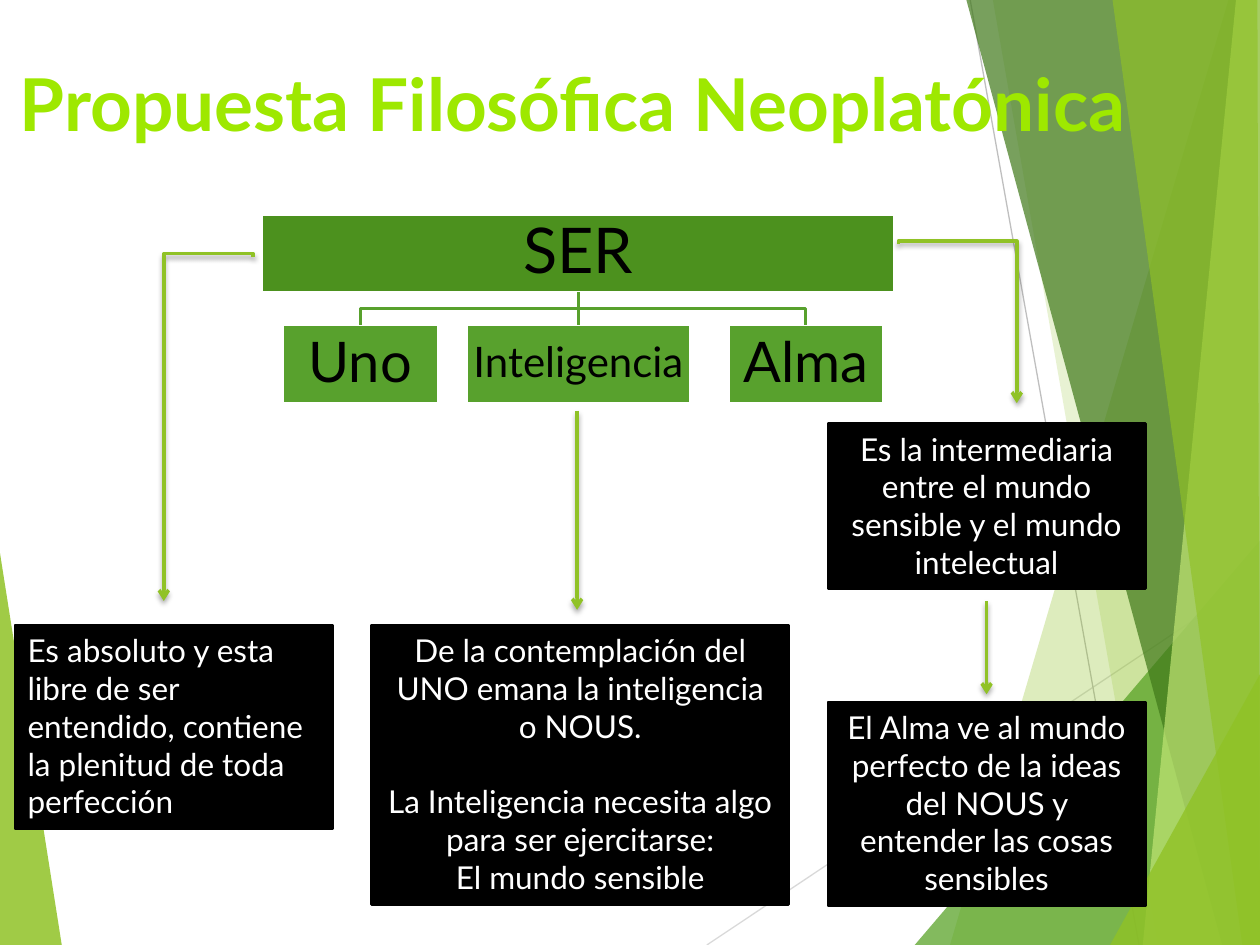
from dataclasses import dataclass
from typing import Optional

import lxml.etree
import pptx
import pptx.dml.color
import pptx.enum.shapes
import pptx.enum.text
import pptx.oxml.ns
import pptx.util

Inches = pptx.util.Inches
Pt = pptx.util.Pt
qn = pptx.oxml.ns.qn
Kind = pptx.enum.shapes.MSO_CONNECTOR
Align = pptx.enum.text.PP_ALIGN
Anchor = pptx.enum.text.MSO_ANCHOR
Point = tuple[float, float]


@dataclass(frozen=True)
class Theme:
    font: str = "Lato"
    lime: str = "90C226"
    leaf: str = "54A021"
    moss: str = "3F7819"
    pale: str = "C0E474"
    title: str = "9EE800"
    root: str = "4C911E"
    node: str = "58A12D"
    black: str = "000000"
    white: str = "FFFFFF"
    head: float = 41.6
    big: float = 36
    mid: float = 32
    small: float = 24
    body: float = 18


@dataclass(frozen=True)
class Facet:
    points: list[Point]
    color: str
    alpha: int


@dataclass(frozen=True)
class Box:
    left: float
    top: float
    width: float
    height: float
    lines: list[str]
    fill: str
    edge: str
    ink: str
    size: float
    align: Align = Align.CENTER
    anchor: Anchor = Anchor.TOP
    inset: Optional[float] = None
    gap: Optional[int] = None  # index of the paragraph set off by one line


T = Theme()


def rgb(code: str) -> pptx.dml.color.RGBColor:
    return pptx.dml.color.RGBColor.from_string(code)


def sub(parent, tag: str, **attrs):
    return lxml.etree.SubElement(parent, qn(tag), attrs)


def draw_facet(shapes, facet: Facet) -> None:
    first, *rest = [(Inches(x), Inches(y)) for x, y in facet.points]
    pen = shapes.build_freeform(*first)
    pen.add_line_segments(rest, close=True)
    shape = pen.convert_to_shape()
    shape.shadow.inherit = False
    shape.line.fill.background()
    shape.fill.solid()
    shape.fill.fore_color.rgb = rgb(facet.color)
    tint = shape.fill._xPr.find(qn("a:solidFill"))[0]
    sub(tint, "a:alpha", val=str(facet.alpha * 1000))


def write(shape, lines: list[str], size: float, ink: str, align: Align,
          bold: bool = False) -> None:
    frame = shape.text_frame
    frame.word_wrap = True
    frame.text = "\n".join(lines)
    for para in frame.paragraphs:
        para.alignment = align
        for run in para.runs:
            run.font.name = T.font
            run.font.size = Pt(size)
            run.font.bold = bold
            run.font.color.rgb = rgb(ink)


def draw_box(shapes, box: Box):
    shape = shapes.add_shape(
        pptx.enum.shapes.MSO_SHAPE.RECTANGLE, Inches(box.left),
        Inches(box.top), Inches(box.width), Inches(box.height))
    shape.shadow.inherit = False
    shape.fill.solid()
    shape.fill.fore_color.rgb = rgb(box.fill)
    shape.line.color.rgb = rgb(box.edge)
    shape.line.width = Pt(1.5)
    write(shape, box.lines, box.size, box.ink, box.align)
    frame = shape.text_frame
    frame.vertical_anchor = box.anchor
    if box.inset is not None:
        frame.margin_left = frame.margin_right = Inches(box.inset)
        frame.margin_top = frame.margin_bottom = Inches(box.inset)
        for para in frame.paragraphs:
            para.line_spacing = 0.9
    if box.gap is not None:
        frame.paragraphs[box.gap].space_before = Pt(1.2 * box.size)
    return shape


def draw_line(shapes, start: Point, end: Point, color: str, width: float,
              kind: Kind = Kind.STRAIGHT):
    line = shapes.add_connector(kind, *map(Inches, start + end))
    line.line.color.rgb = rgb(color)
    line.line.width = Pt(width)
    sub(line._element.spPr, "a:effectLst")
    return line


def turn(line, start: Point, end: Point, bend: float) -> None:
    """Make an elbow leave its start vertically, bending at a share of its drop."""
    (x1, y1), (x2, y2) = start, end
    drop, span = y2 - y1, abs(x2 - x1)
    line.left = Inches((x1 + x2 - drop) / 2)
    line.top = Inches((y1 + y2 - span) / 2)
    line.width, line.height = Inches(drop), Inches(span)
    right = x2 > x1
    props = line._element.spPr
    frame = props.find(qn("a:xfrm"))
    frame.set("rot", str((270 if right else 90) * 60000))
    frame.set("flipH", str(int(right)))
    frame.set("flipV", "0")
    geom = props.find(qn("a:prstGeom"))
    guides = geom.find(qn("a:avLst"))
    if guides is None:
        guides = sub(geom, "a:avLst")
    sub(guides, "a:gd", name="adj1", fmla=f"val {round(bend * 100000)}")


def draw_arrow(shapes, start: Point, end: Point,
               bend: Optional[float] = None) -> None:
    kind = Kind.STRAIGHT if bend is None else Kind.ELBOW
    line = draw_line(shapes, start, end, T.lime, 2, kind)
    if bend is not None:
        turn(line, start, end, bend)
    props = line._element.spPr
    sub(props.find(qn("a:ln")), "a:tailEnd", type="arrow")
    shade = sub(props.find(qn("a:effectLst")), "a:outerShdw", blurRad="38100",
                dist="25400", dir="5400000", rotWithShape="0")
    sub(sub(shade, "a:srgbClr", val=T.black), "a:alpha", val="35000")


def branch(shapes, root, node) -> None:
    start = ((root.left + root.width / 2) / Inches(1),
             (root.top + root.height) / Inches(1))
    end = (node.left + node.width / 2) / Inches(1), node.top / Inches(1)
    bent = abs(end[0] - start[0]) > 0.1
    line = draw_line(shapes, start, end, T.node, 1.5,
                     Kind.ELBOW if bent else Kind.STRAIGHT)
    line.begin_connect(root, 2)
    line.end_connect(node, 0)
    if bent:
        turn(line, start, end, 0.5)


def cell(left: float, top: float, width: float, text: str, fill: str,
         size: float, inset: float = 0.02) -> Box:
    return Box(left, top, width, 0.62, [text], fill, T.white, T.black, size,
               anchor=Anchor.MIDDLE, inset=inset)


def note(left: float, top: float, width: float, height: float, *lines: str,
         **extra) -> Box:
    return Box(left, top, width, height, list(lines), T.black, T.black,
               T.white, T.body, **extra)


FACETS = [
    Facet([(9.75, 0), (7.54, 7.5), (10, 7.5), (10, 0)], T.lime, 30),
    Facet([(7.88, 0), (9.19, 7.5), (10, 7.5), (10, 0)], T.lime, 20),
    Facet([(7.26, 7.5), (10, 4.29), (10, 7.5)], T.leaf, 72),
    Facet([(7.67, 0), (9.7, 7.5), (10, 7.5), (10, 0)], T.moss, 70),
    Facet([(9.81, 0), (9.07, 7.5), (10, 7.5), (10, 0)], T.pale, 70),
    Facet([(8.83, 0), (9.86, 7.5), (10, 7.5), (9.98, 0)], T.lime, 65),
    Facet([(8.81, 7.5), (10, 5.35), (10, 7.5)], T.lime, 80),
]
ROOT = cell(2.08, 1.7, 5.02, "SER", T.root, T.big, 0.03)
NODES = [
    cell(2.24, 2.58, 1.24, "Uno", T.node, T.mid),
    cell(3.7, 2.58, 1.78, "Inteligencia", T.node, T.small),
    cell(5.78, 2.58, 1.23, "Alma", T.node, T.mid),
]
NOTES = [
    note(0.12, 4.96, 2.52, 1.62, "Es absoluto y esta libre de ser entendido, "
         "contiene la plenitud de toda perfección", align=Align.LEFT),
    note(2.95, 4.96, 3.31, 2.22,
         "De la contemplación del UNO emana la inteligencia o NOUS.",
         "La Inteligencia necesita algo para ser ejercitarse:",
         "El mundo sensible", gap=1),
    note(6.57, 3.36, 2.52, 1.31, "Es la intermediaria entre el mundo sensible "
         "y el mundo intelectual"),
    note(6.57, 5.57, 2.52, 1.62, "El Alma ve al mundo perfecto de la ideas "
         "del NOUS y entender las cosas sensibles"),
]
ARROWS = [
    ((2.01, 2.04), (1.3, 4.77), -0.01),
    ((7.13, 1.94), (8.07, 3.2), -0.02),
    ((4.58, 3.26), (4.58, 4.84), None),
    ((7.83, 4.77), (7.83, 5.51), None),
]


def main() -> None:
    deck = pptx.Presentation()
    deck.slide_width, deck.slide_height = Inches(10), Inches(7.5)
    shapes = deck.slides.add_slide(deck.slide_layouts[6]).shapes

    # Backdrop
    draw_facet(shapes, Facet([(0, 4.39), (0.49, 7.5), (0, 7.5)], T.lime, 85))
    draw_line(shapes, (5.61, 7.5), (10, 4.57), "D9D9D9", 0.75)
    draw_line(shapes, (7.7, 0), (9.04, 7.5), "BFBFBF", 0.75)
    for facet in FACETS:
        draw_facet(shapes, facet)

    # Tree
    root = draw_box(shapes, ROOT)
    for node in NODES:
        branch(shapes, root, draw_box(shapes, node))

    # Notes
    for box in NOTES:
        draw_box(shapes, box)

    # Title
    title = shapes.add_textbox(*map(Inches, (0.06, 0.13, 9.43, 1.37)))
    write(title, ["Propuesta Filosófica Neoplatónica"], T.head, T.title,
          Align.LEFT, bold=True)
    title.text_frame.vertical_anchor = Anchor.MIDDLE

    # Arrows
    for start, end, bend in ARROWS:
        draw_arrow(shapes, start, end, bend)

    deck.save("out.pptx")


if __name__ == "__main__":
    main()
